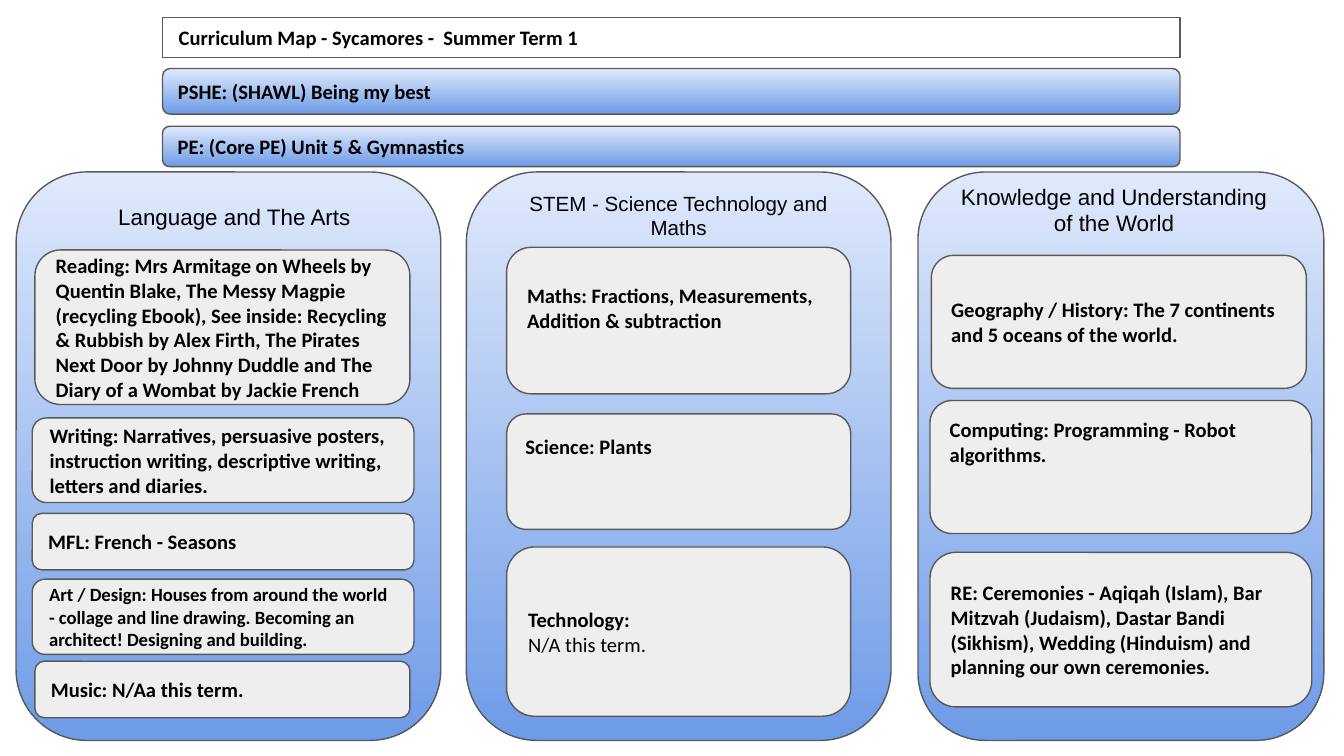
from lxml import etree
from pptx import Presentation
from pptx.dml.color import RGBColor
from pptx.enum.shapes import MSO_SHAPE
from pptx.enum.text import MSO_ANCHOR, MSO_AUTO_SIZE, PP_ALIGN
from pptx.util import Inches, Pt

ROUND = MSO_SHAPE.FLOWCHART_ALTERNATE_PROCESS
LEFT, CENTER = PP_ALIGN.LEFT, PP_ALIGN.CENTER
MIDDLE, TOP = MSO_ANCHOR.MIDDLE, MSO_ANCHOR.TOP
BLACK = RGBColor(0x00, 0x00, 0x00)
EDGE = RGBColor(0x59, 0x59, 0x59)
GREY = RGBColor(0xEE, 0xEE, 0xEE)
PALE = RGBColor(0xDF, 0xE9, 0xFB)
BLUE = RGBColor(0x6E, 0x9B, 0xE7)
PAD = 0.1
LINE = 0.19  # height of one 11 pt line
PANEL_TOP, PANEL_H = 1.28, 4.23
BAR_LEFT, BAR_W = 1.21, 7.57

TITLE = "Curriculum Map - Sycamores -  Summer Term 1"
TITLE_BOX = (BAR_LEFT, 0.13, BAR_W, 0.3)
# top, height, text
BARS = [
    (0.51, 0.34, "PSHE: (SHAWL) Being my best"),
    (0.94, 0.3, "PE: (Core PE) Unit 5 & Gymnastics"),
]
# panel: left, width
# head: text, box, size, alignment, left inset
# cards: left, top, width, height, text size, free lines below, paragraphs
COLUMNS = [
    {
        "panel": (0.12, 3.16),
        "head": ("Language and The Arts", (0.41, 1.41, 2.56, 0.34), 12, LEFT, 0.47),
        "cards": [
            (0.26, 1.86, 2.79, 1.15, 11, 0, [
                "Reading: Mrs Armitage on Wheels by Quentin Blake, The Messy Magpie "
                "(recycling Ebook), See inside: Recycling & Rubbish by Alex Firth, "
                "The Pirates Next Door by Johnny Duddle and The Diary of a Wombat "
                "by Jackie French"]),
            (0.24, 3.11, 2.84, 0.63, 11, 0, [
                "Writing: Narratives, persuasive posters, instruction writing, "
                "descriptive writing, letters and diaries."]),
            (0.24, 3.82, 2.84, 0.42, 11, 0, ["MFL: French - Seasons"]),
            (0.24, 4.31, 2.84, 0.56, 10, 0, [
                "Art / Design: Houses from around the world - collage and line "
                "drawing. Becoming an architect! Designing and building."]),
            (0.26, 4.92, 2.79, 0.42, 11, 0, ["Music: N/Aa this term."]),
        ],
    },
    {
        "panel": (3.47, 3.16),
        "head": ("STEM - Science Technology and Maths",
                 (3.77, 1.32, 2.56, 0.3), 11, CENTER, PAD),
        "cards": [
            (3.77, 1.84, 2.56, 1.09, 11, 1, [
                "Maths: Fractions, Measurements, Addition & subtraction"]),
            (3.77, 3.08, 2.56, 0.86, 11, 2, ["Science: Plants"]),
            (3.77, 4.07, 2.56, 1.26, 11, 0, ["Technology:", "N/A this term."]),
        ],
    },
    {
        "panel": (6.83, 3.02),
        "head": ("Knowledge and Understanding of the World",
                 (7.01, 1.26, 2.56, 0.63), 12, CENTER, PAD),
        "cards": [
            (6.93, 1.9, 2.79, 0.99, 11, 0, [
                "Geography / History: The 7 continents and 5 oceans of the world."]),
            (6.92, 2.98, 2.84, 0.99, 11, 2, [
                "Computing: Programming - Robot algorithms."]),
            (6.92, 4.11, 2.84, 1.15, 11, 0, [
                "RE: Ceremonies - Aqiqah (Islam), Bar Mitzvah (Judaism), Dastar Bandi "
                "(Sikhism), Wedding (Hinduism) and planning our own ceremonies."]),
        ],
    },
]


def edge(shape):
    shape.line.color.rgb = EDGE
    shape.line.width = Pt(0.75)


def block(box, color=None):
    """Add a rounded block, in one colour or with the blue gradient."""
    shape = shapes.add_shape(ROUND, *map(Inches, box))
    shape.shadow.inherit = False
    if color:
        shape.fill.solid()
        shape.fill.fore_color.rgb = color
    else:
        shape.fill.gradient()
        shape.fill.gradient_angle = 270
        for stop, tone, pos in zip(shape.fill.gradient_stops, (PALE, BLUE), (0, 1)):
            stop.color.rgb = tone
            stop.position = pos
    edge(shape)
    return shape


def write(shape, lines, size=11, font="Calibri", bold=True, align=LEFT,
          anchor=MIDDLE, left=PAD, free=0):
    """Fill in the text; free keeps that many lines empty at the foot."""
    frame = shape.text_frame
    frame.text = "\n".join(lines)
    frame.word_wrap = True
    frame.auto_size = MSO_AUTO_SIZE.NONE
    frame.vertical_anchor = anchor
    frame.margin_left = Inches(left)
    frame.margin_top = frame.margin_right = Inches(PAD)
    frame.margin_bottom = Inches(PAD + free * LINE)
    for i, para in enumerate(frame.paragraphs):
        para.alignment = align
        para.font.name = font
        para.font.size = Pt(size)
        para.font.bold = bold and i == 0
        para.font.color.rgb = BLACK


deck = Presentation()
deck.slide_width = Inches(10)
deck.slide_height = deck.slide_width * 9 // 16
slide = deck.slides.add_slide(deck.slide_layouts[5])
shapes = slide.shapes

title = shapes.title
title.left, title.top, title.width, title.height = map(Inches, TITLE_BOX)
geom = etree.SubElement(
    title.element.spPr,
    "{http://schemas.openxmlformats.org/drawingml/2006/main}prstGeom")
geom.set("prst", "flowChartAlternateProcess")
edge(title)
write(title, [TITLE], left=0.12)

for top, height, text in BARS:
    write(block((BAR_LEFT, top, BAR_W, height)), [text])

for col in COLUMNS:
    left, width = col["panel"]
    block((left, PANEL_TOP, width, PANEL_H))
    for *box, size, free, lines in col["cards"]:
        write(block(box, GREY), lines, size, free=free)
    text, box, size, align, inset = col["head"]
    head = shapes.add_textbox(*map(Inches, box))
    write(head, [text], size, "Arial", False, align, TOP, inset)

deck.save("out.pptx")
